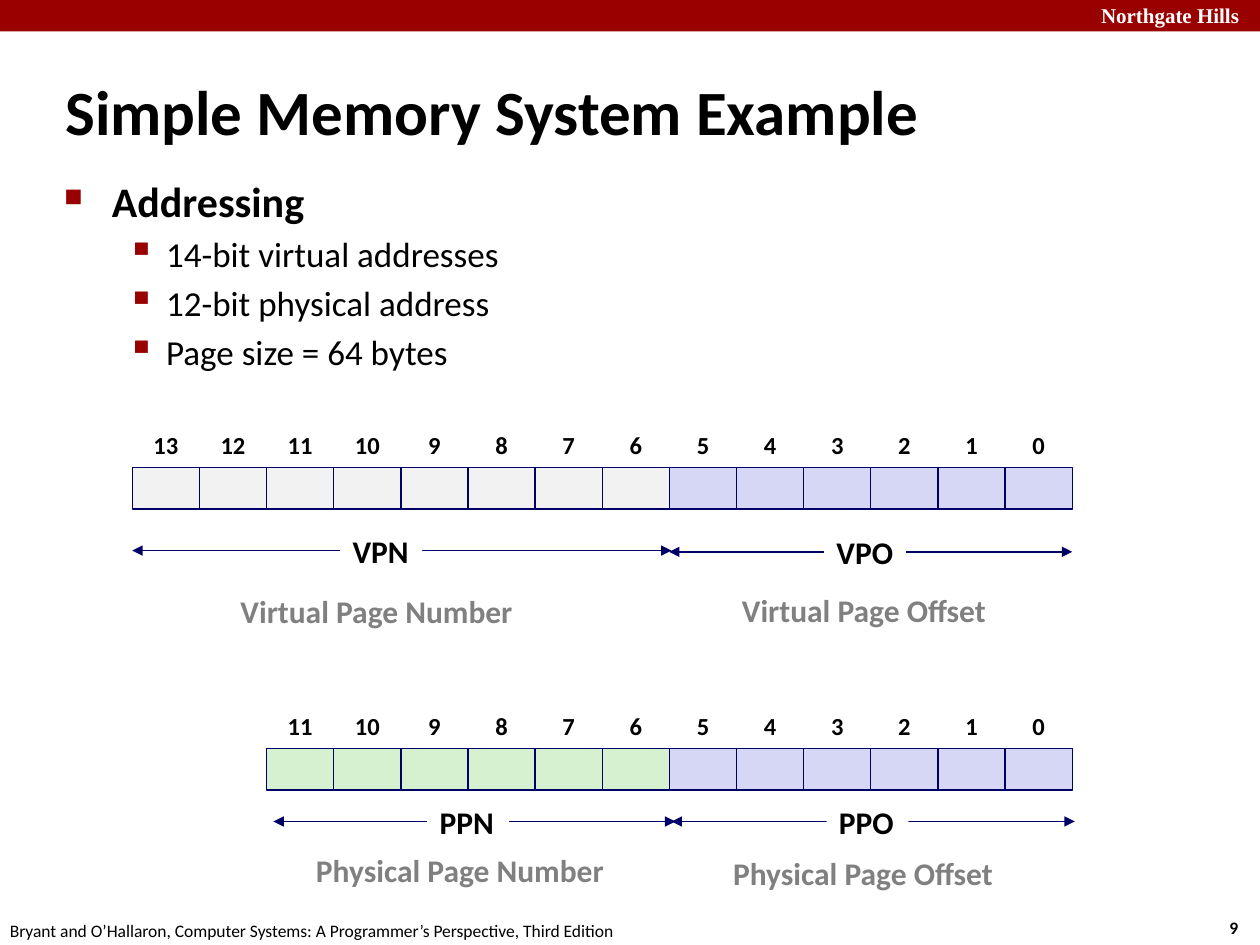
import pptx
import pptx.util
import pptx.dml.color
import pptx.enum.shapes
import pptx.enum.text
import pptx.oxml.ns
import lxml.etree

Inches = pptx.util.Inches
Pt = pptx.util.Pt
qn = pptx.oxml.ns.qn
ALIGN = pptx.enum.text.PP_ALIGN
ANCHOR = pptx.enum.text.MSO_ANCHOR

COLORS = {
    "red": "990000", "navy": "000066", "black": "000000", "white": "FFFFFF",
    "gray": "808080", "virtual": "F2F2F2", "physical": "D5F1CF", "offset": "D6D6F5",
}

ROW_RIGHT = 8.51
BIT_WIDTH = 7.46 / 14
BIT_HEIGHT = 0.33
OFFSET_BITS = 6


def rgb(name):
    return pptx.dml.color.RGBColor.from_string(COLORS[name])


def write(para, text, size=18, bold=False, color="black", font="Calibri",
          align=ALIGN.LEFT, before=0, line=1.0):
    para.alignment = align
    para.space_before = Pt(before)
    para.line_spacing = line
    span = para.add_run()
    span.text = text
    span.font.name = font
    span.font.size = Pt(size)
    span.font.bold = bold
    span.font.color.rgb = rgb(color)


class Painter:
    def __init__(self, page):
        self.page = page
        self.line_color = "navy"
        self.line_width = Pt(0.75)

    def rect(self, left, top, width, height, fill, outlined=False):
        box = self.page.shapes.add_shape(
            pptx.enum.shapes.MSO_SHAPE.RECTANGLE,
            Inches(left), Inches(top), Inches(width), Inches(height))
        box.shadow.inherit = False
        box.fill.solid()
        box.fill.fore_color.rgb = rgb(fill)
        if outlined:
            box.line.color.rgb = rgb(self.line_color)
            box.line.width = self.line_width
        else:
            box.line.fill.background()
        return box

    def text(self, left, top, width, height, text, fill=None, wrap=False,
             anchor=ANCHOR.TOP, **style):
        box = self.page.shapes.add_textbox(
            Inches(left), Inches(top), Inches(width), Inches(height))
        if fill:
            box.fill.solid()
            box.fill.fore_color.rgb = rgb(fill)
        frame = box.text_frame
        frame.word_wrap = wrap
        frame.vertical_anchor = anchor
        write(frame.paragraphs[0], text, **style)

    def bullets(self, left, top, width, height, items):
        box = self.page.shapes.add_textbox(
            Inches(left), Inches(top), Inches(width), Inches(height))
        frame = box.text_frame
        frame.word_wrap = True
        for index, (level, text) in enumerate(items):
            para = frame.add_paragraph() if index else frame.paragraphs[0]
            size = 20 if level else 24
            write(para, text, size=size, bold=not level, before=size * 0.2)
            para.level = level
            margin, hanging, mark, scale = (
                (0.81, 0.31, "▪", 110) if level else (0.38, 0.38, "■", 60))
            props = para._p.get_or_add_pPr()
            props.set("marL", str(Inches(margin)))
            props.set("indent", str(-Inches(hanging)))
            tint = lxml.etree.SubElement(props, qn("a:buClr"))
            lxml.etree.SubElement(tint, qn("a:srgbClr"), val=COLORS["red"])
            lxml.etree.SubElement(props, qn("a:buSzPct"), val=str(scale * 1000))
            lxml.etree.SubElement(props, qn("a:buChar"), char=mark)

    def arrow(self, left, right, y):
        arrow = self.page.shapes.add_connector(
            pptx.enum.shapes.MSO_CONNECTOR.STRAIGHT,
            Inches(left), Inches(y), Inches(right), Inches(y))
        arrow.line.color.rgb = rgb(self.line_color)
        arrow.line.width = self.line_width
        outline = arrow.line._get_or_add_ln()
        for end in ("a:headEnd", "a:tailEnd"):
            lxml.etree.SubElement(outline, qn(end), type="triangle")
        lxml.etree.SubElement(arrow._element.spPr, qn("a:effectLst"))

    def address(self, bits, top, number_fill):
        for bit in reversed(range(bits)):
            left = ROW_RIGHT - (bit + 1) * BIT_WIDTH
            fill = "offset" if bit < OFFSET_BITS else number_fill
            self.rect(left, top, BIT_WIDTH, BIT_HEIGHT, fill, outlined=True)
            self.text(left, top - BIT_HEIGHT, BIT_WIDTH, BIT_HEIGHT, str(bit),
                      anchor=ANCHOR.MIDDLE, size=14, bold=True,
                      align=ALIGN.CENTER, before=5.2, line=0.88)

    def field(self, left, right, y, short, short_left, name, name_left, name_top, name_width):
        label = {"bold": True, "before": 6.8, "line": 0.88}
        self.arrow(left, right, y)
        self.text(short_left, y - 0.16, 0.65, 0.36, short, fill="white", **label)
        self.text(name_left, name_top, name_width, 0.36, name, color="gray", **label)


def main():
    deck = pptx.Presentation()
    deck.slide_width, deck.slide_height = Inches(10), Inches(7.5)
    painter = Painter(deck.slides.add_slide(deck.slide_layouts[6]))

    painter.rect(0, 0, 10, 0.25, "red")
    painter.text(8.64, -0.03, 1.43, 0.3, "Northgate Hills", size=12, bold=True,
                 color="white", font="Times New Roman")
    painter.text(9.66, 7.23, 0.37, 0.27, "9", size=10, bold=True)
    painter.text(-0.02, 7.25, 5.08, 0.27,
                 "Bryant and O’Hallaron, Computer Systems: "
                 "A Programmer’s Perspective, Third Edition", size=10)
    painter.text(0.42, 0.56, 7.99, 0.63, "Simple Memory System Example", wrap=True,
                 anchor=ANCHOR.MIDDLE, size=36, bold=True)
    painter.bullets(0.41, 1.34, 9.09, 1.73, [
        (0, "Addressing"),
        (1, "14-bit virtual addresses"),
        (1, "12-bit physical address"),
        (1, "Page size = 64 bytes"),
    ])

    painter.address(14, 3.71, "virtual")
    painter.address(12, 5.94, "physical")

    for field in (
        (5.31, 8.51, 4.38, "VPO", 6.54, "Virtual Page Offset", 5.79, 4.68, 2.16),
        (5.33, 8.53, 6.52, "PPO", 6.56, "Physical Page Offset", 5.72, 6.77, 2.29),
        (2.17, 5.36, 6.52, "PPN", 3.39, "Physical Page Number", 2.41, 6.74, 2.5),
        (1.05, 5.33, 4.37, "VPN", 2.7, "Virtual Page Number", 1.81, 4.69, 2.38),
    ):
        painter.field(*field)

    deck.save("out.pptx")


if __name__ == "__main__":
    main()
